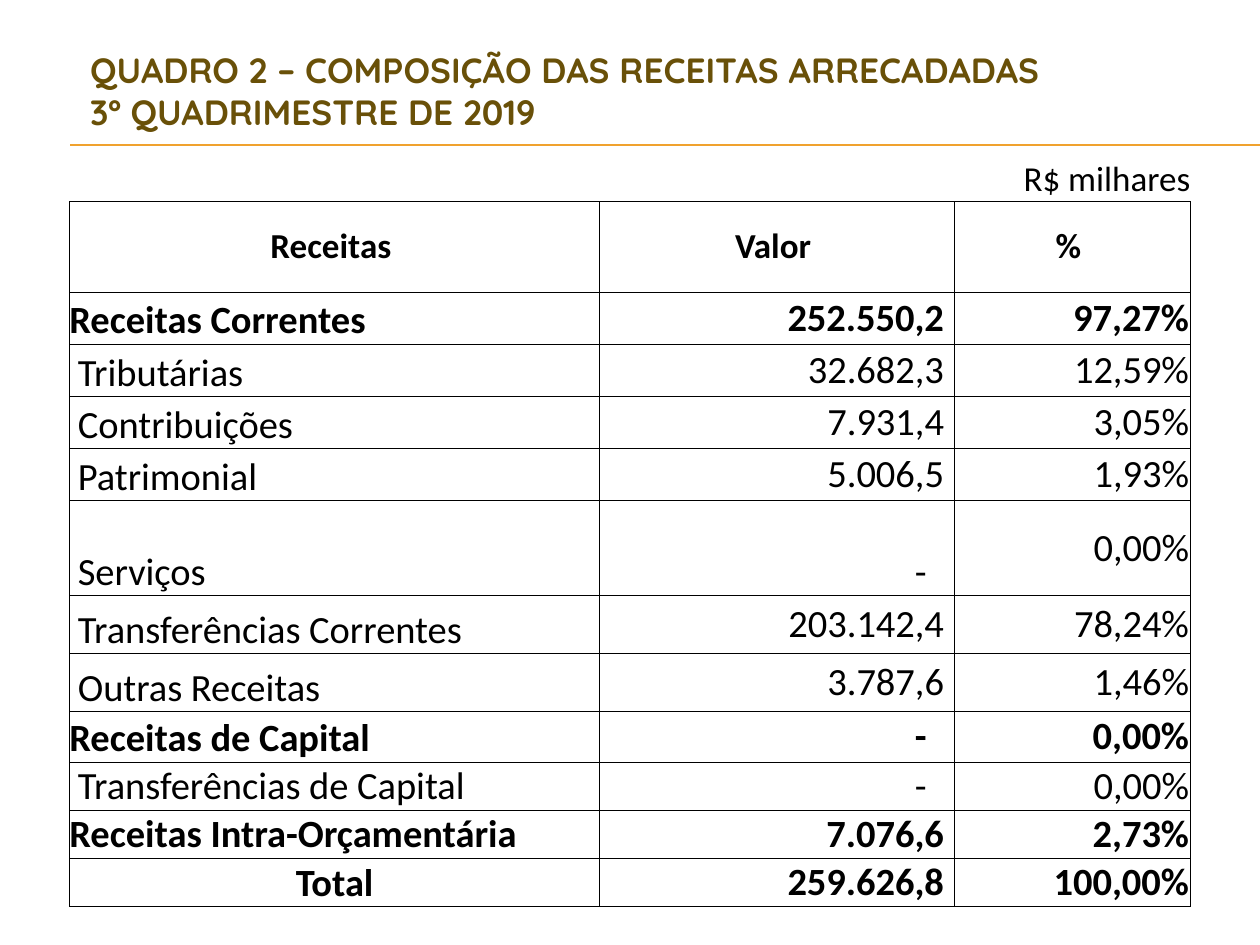
from lxml import etree
from pptx import Presentation
from pptx import util as u
from pptx.dml.color import RGBColor
from pptx.enum import shapes, text
from pptx.oxml.ns import qn

Cm, Pt = u.Cm, u.Pt
LEFT, MID, RIGHT = text.PP_ALIGN.LEFT, text.PP_ALIGN.CENTER, text.PP_ALIGN.RIGHT
BASE, HALF = text.MSO_ANCHOR.BOTTOM, text.MSO_ANCHOR.MIDDLE

COLS = [10.69, 2.44, 4.7, 4.77]
# Label, value, share, row height in cm
ROWS = [
    ("Receitas Correntes", "252.550,2", "97,27%", 1.05),
    ("Tributárias", "32.682,3", "12,59%", 1.05),
    ("Contribuições", "7.931,4", "3,05%", 1.05),
    ("Patrimonial", "5.006,5", "1,93%", 1.05),
    ("Serviços", "-", "0,00%", 1.91),
    ("Transferências Correntes", "203.142,4", "78,24%", 1.17),
    ("Outras Receitas", "3.787,6", "1,46%", 1.17),
    ("Receitas de Capital", "-", "0,00%", 1.02),
    ("Transferências de Capital", "-", "0,00%", 0.97),
    ("Receitas Intra-Orçamentária", "7.076,6", "2,73%", 0.97),
    ("Total", "259.626,8", "100,00%", 0.97),
]
GROUPS = {"Receitas Correntes", "Receitas de Capital",
          "Receitas Intra-Orçamentária", "Total"}


def color(code):
    return RGBColor.from_string(code)


def style(par, name, size, code, bold=False, align=LEFT):
    par.alignment = align
    par.font.name, par.font.size, par.font.bold = name, Pt(size), bold
    par.font.color.rgb = color(code)


def border(cell, sides):
    """Draw thin black lines on the named sides, and none on the others."""
    props = cell._tc.get_or_add_tcPr()
    for spot, side in enumerate("LRTB"):
        line = etree.Element(qn("a:ln" + side), w=str(Pt(0.5)))
        if side in sides:
            fill = etree.SubElement(line, qn("a:solidFill"))
            etree.SubElement(fill, qn("a:srgbClr"), val="000000")
        else:
            etree.SubElement(line, qn("a:noFill"))
        props.insert(spot, line)


def write(cell, words, size, bold, align, anchor, left=0, right=0):
    cell.vertical_anchor = anchor
    cell.margin_left, cell.margin_right = Cm(left), Cm(right)
    cell.text = words
    style(cell.text_frame.paragraphs[0], "Calibri", size, "000000", bold, align)


def heading(slide, x, y, w, h):
    # Title
    box = slide.shapes.add_textbox(Cm(x), Cm(y), Cm(w), Cm(h))
    frame = box.text_frame
    frame.word_wrap = True
    frame.vertical_anchor = HALF
    par = frame.paragraphs[0]
    par.text = ("QUADRO 2 – COMPOSIÇÃO DAS RECEITAS ARRECADADAS\v"
                "3º QUADRIMESTRE DE 2019")
    style(par, "Quicksand", 20, "695008", True)

    # Double rule, running to the slide's right edge
    for drop in (1.73, 1.75):
        rule = slide.shapes.add_connector(
            shapes.MSO_CONNECTOR.STRAIGHT,
            Cm(x - 0.15), Cm(y + drop), Cm(25.4), Cm(y + drop))
        rule.line.color.rgb = color("F0A22E")
        rule.line.width = Pt(0.75)
        etree.SubElement(rule._element.spPr, qn("a:effectLst"))


def revenue(slide, x, y):
    highs = [0.88, 1.83] + [row[3] for row in ROWS]
    frame = slide.shapes.add_table(len(highs), len(COLS), Cm(x), Cm(y),
                                   Cm(sum(COLS)), Cm(sum(highs)))
    table = frame.table
    table.first_row = table.horz_banding = False
    for col, wide in zip(table.columns, COLS):
        col.width = Cm(wide)
    for row, high in zip(table.rows, highs):
        row.height = Cm(high)

    # Plain cells; the unit row has only its lower line
    for num, row in enumerate(table.rows):
        for cell in row.cells:
            cell.fill.background()
            cell.margin_left = cell.margin_right = 0
            cell.margin_top = cell.margin_bottom = 0
            border(cell, "LRTB" if num else "B")
        if num:
            table.cell(num, 1).merge(table.cell(num, 2))

    # Unit and column heads
    write(table.cell(0, 3), "R$ milhares", 20, False, RIGHT, BASE)
    for col, words in ((0, "Receitas"), (1, "Valor"), (3, "%")):
        write(table.cell(1, col), words, 20, True, MID, HALF, right=0.15)

    # Body
    for num, (label, value, share, high) in enumerate(ROWS, 2):
        bold = label in GROUPS
        write(table.cell(num, 0), label, 22, bold,
              MID if label == "Total" else LEFT, BASE, left=0 if bold else 0.17)
        write(table.cell(num, 1), value, 22, bold, RIGHT,
              BASE if high > 1.5 else HALF, right=0.55 if value == "-" else 0.2)
        write(table.cell(num, 3), share, 22, bold, RIGHT, HALF, right=0.03)


def main():
    deck = Presentation()
    deck.slide_width, deck.slide_height = Cm(25.4), Cm(19.05)
    slide = deck.slides.add_slide(deck.slide_layouts[6])
    heading(slide, 1.57, 1.19, 22.81, 1.27)
    revenue(slide, 1.4, 3.18)
    deck.save("out.pptx")


if __name__ == "__main__":
    main()
